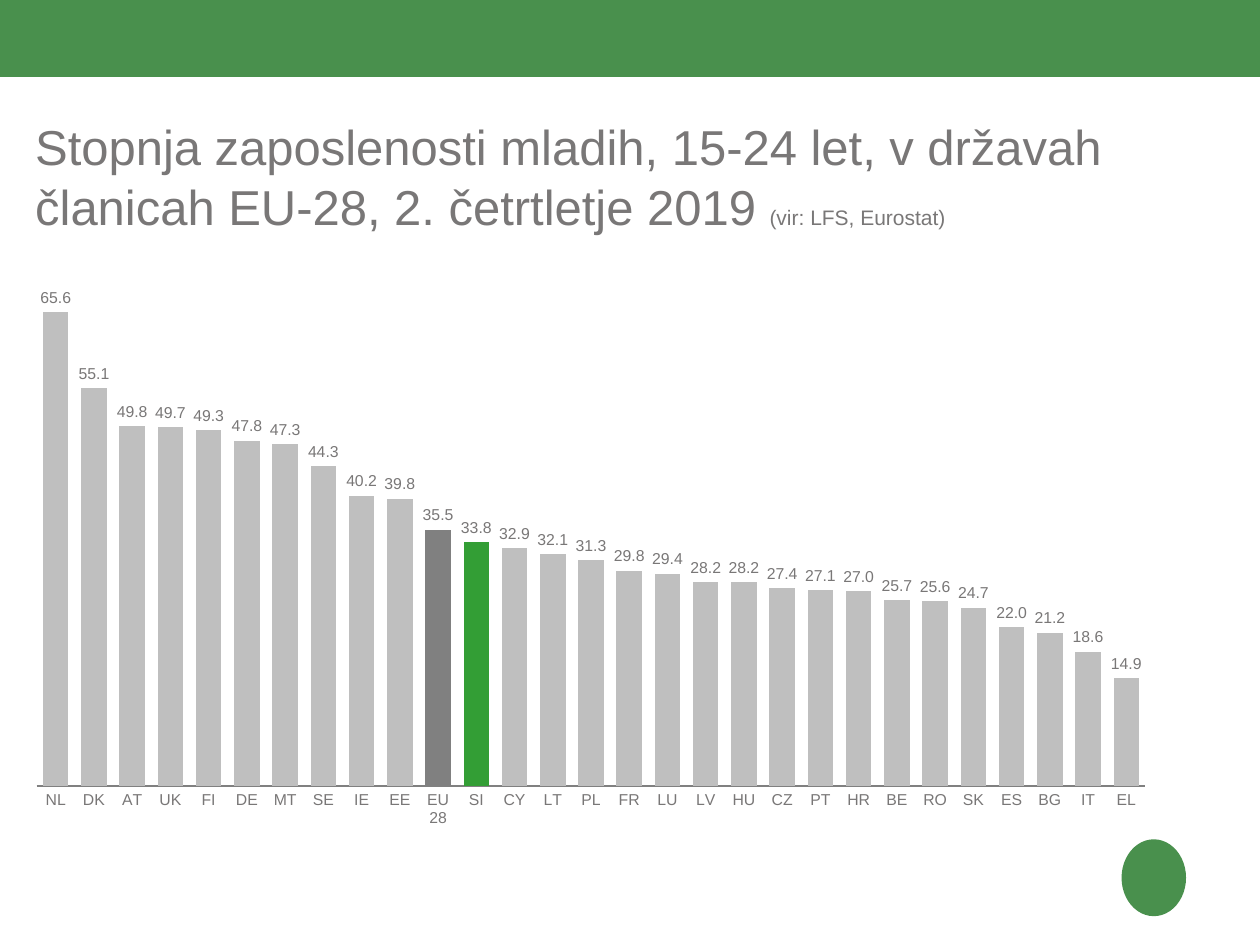
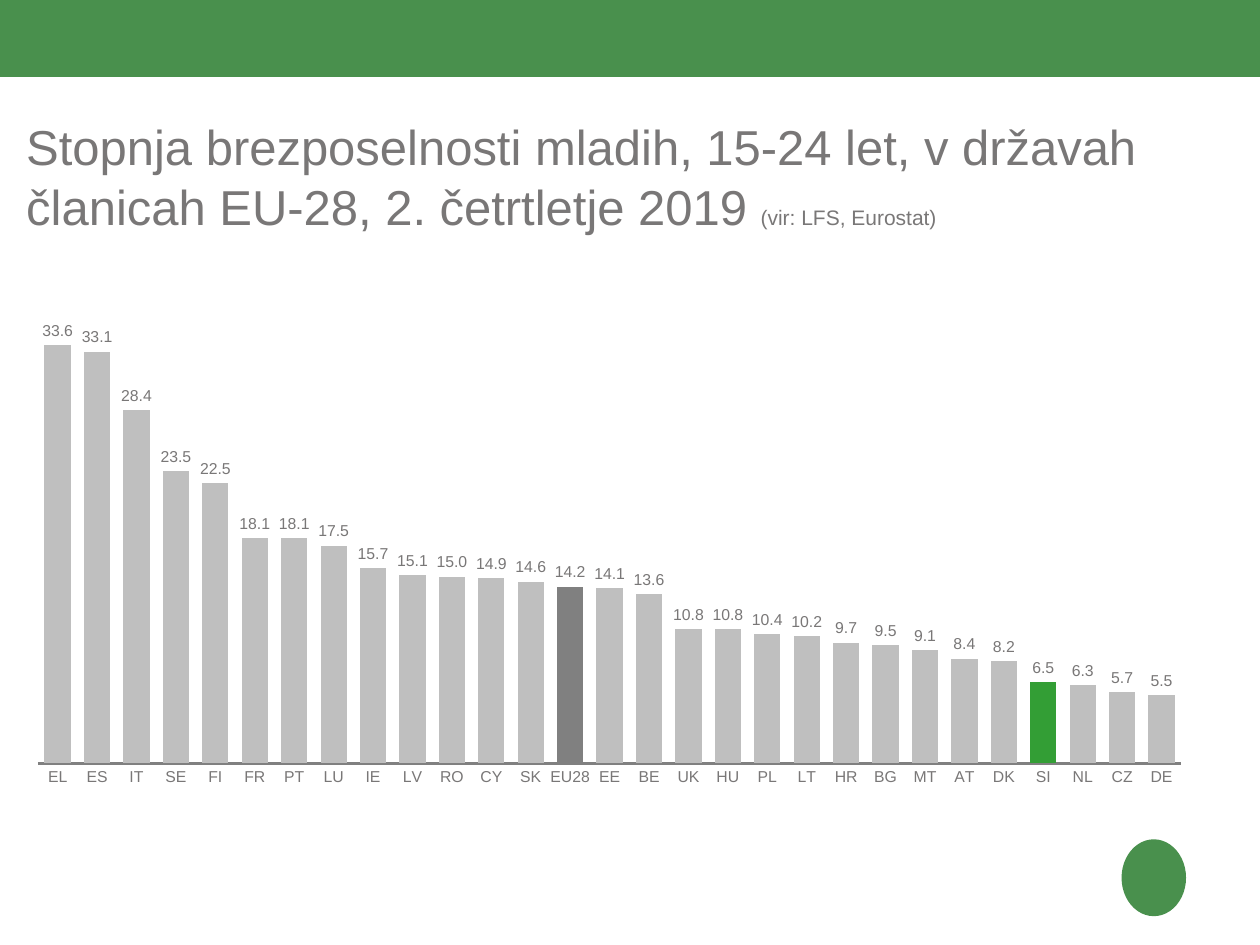
from lxml.etree import SubElement
from pptx import Presentation
from pptx.chart.data import CategoryChartData
from pptx.dml.color import RGBColor
from pptx.enum.chart import XL_CHART_TYPE as ChartType
from pptx.enum.chart import XL_LABEL_POSITION as LabelPosition
from pptx.enum.chart import XL_TICK_LABEL_POSITION as TickLabels
from pptx.enum.chart import XL_TICK_MARK as TickMark
from pptx.enum.shapes import MSO_SHAPE as Shape
from pptx.enum.text import MSO_ANCHOR as Anchor
from pptx.oxml.ns import qn
from pptx.util import Cm, Pt

FONT = "Arial"
GREEN = "49904D"
TEXT_GREY = "797777"
BAR_GREY = "BFBFBF"
EU_GREY = "808080"
SLOVENIA_GREEN = "339E35"
NUMBER_FORMAT = "#,##0.0"
HIGHLIGHTS = {"EU 28": EU_GREY, "EU28": EU_GREY, "SI": SLOVENIA_GREEN}

SLIDE_SIZE = (25.4, 19.05)
BAND_BOX = (0, 0, 25.4, 1.55)
EMBLEM_BOX = (22.61, 16.92, 1.3, 1.55)

EMPLOYMENT = {
    "NL": 65.6, "DK": 55.1, "AT": 49.8, "UK": 49.7, "FI": 49.3, "DE": 47.8,
    "MT": 47.3, "SE": 44.3, "IE": 40.2, "EE": 39.8, "EU 28": 35.5, "SI": 33.8,
    "CY": 32.9, "LT": 32.1, "PL": 31.3, "FR": 29.8, "LU": 29.4, "LV": 28.2,
    "HU": 28.2, "CZ": 27.4, "PT": 27.1, "HR": 27.0, "BE": 25.7, "RO": 25.6,
    "SK": 24.7, "ES": 22.0, "BG": 21.2, "IT": 18.6, "EL": 14.9,
}
UNEMPLOYMENT = {
    "EL": 33.6, "ES": 33.1, "IT": 28.4, "SE": 23.5, "FI": 22.5, "FR": 18.1,
    "PT": 18.1, "LU": 17.5, "IE": 15.7, "LV": 15.1, "RO": 15.0, "CY": 14.9,
    "SK": 14.6, "EU28": 14.2, "EE": 14.1, "BE": 13.6, "UK": 10.8, "HU": 10.8,
    "PL": 10.4, "LT": 10.2, "HR": 9.7, "BG": 9.5, "MT": 9.1, "AT": 8.4,
    "DK": 8.2, "SI": 6.5, "NL": 6.3, "CZ": 5.7, "DE": 5.5,
}


def color(hex_value):
    return RGBColor.from_string(hex_value)


def paint(target, hex_value):
    target.fill.solid()
    target.fill.fore_color.rgb = color(hex_value)


def to_cm(box):
    return [Cm(length) for length in box]


def add_plain_shape(slide, kind, box):
    shape = slide.shapes.add_shape(kind, *to_cm(box))
    shape.shadow.inherit = False
    paint(shape, GREEN)
    shape.line.fill.background()


def add_title(slide, box, topic):
    frame = slide.shapes.add_textbox(*to_cm(box)).text_frame
    frame.word_wrap = True
    frame.vertical_anchor = Anchor.TOP
    frame.margin_left = frame.margin_right = 0
    frame.margin_top = frame.margin_bottom = 0
    paragraph = frame.paragraphs[0]
    paragraph.line_spacing = Pt(34)
    heading = (f"Stopnja {topic} mladih, 15-24 let, v državah "
               "članicah EU-28, 2. četrtletje 2019 ")
    for text, size in ((heading, 28), ("(vir: LFS, Eurostat)", 12)):
        run = paragraph.add_run()
        run.text = text
        run.font.name = FONT
        run.font.size = Pt(size)
        run.font.color.rgb = color(TEXT_GREY)


def set_plot_area(chart, plot_box):
    """Fix the inner plot area, given as fractions of the chart."""
    plot_area = chart._chartSpace.chart.plotArea
    for old_layout in plot_area.findall(qn("c:layout")):
        plot_area.remove(old_layout)
    layout = plot_area.makeelement(qn("c:layout"))
    plot_area.insert(0, layout)
    manual = SubElement(layout, qn("c:manualLayout"))
    settings = [("layoutTarget", "inner"), ("xMode", "edge"), ("yMode", "edge")]
    settings += zip("xywh", plot_box)
    for tag, value in settings:
        SubElement(manual, qn(f"c:{tag}")).set("val", str(value))


def style_axes(chart, maximum):
    countries, rates = chart.category_axis, chart.value_axis
    for axis in (countries, rates):
        axis.has_major_gridlines = False
        axis.major_tick_mark = axis.minor_tick_mark = TickMark.NONE
    countries.tick_labels.font.size = Pt(9)
    countries.format.line.color.rgb = color(EU_GREY)
    countries.format.line.width = Pt(1.5)
    rates.minimum_scale = 0
    rates.maximum_scale = maximum
    rates.tick_label_position = TickLabels.NONE
    rates.format.line.fill.background()


def add_rate_chart(slide, box, rates, maximum, plot_box):
    data = CategoryChartData(number_format=NUMBER_FORMAT)
    data.categories = list(rates)
    data.add_series("Series 1", list(rates.values()))
    chart = slide.shapes.add_chart(
        ChartType.COLUMN_CLUSTERED, *to_cm(box), data).chart
    chart.has_legend = chart.has_title = False
    chart.font.name = FONT
    chart.font.size = Pt(10)
    chart.font.color.rgb = color(TEXT_GREY)
    set_plot_area(chart, plot_box)
    style_axes(chart, maximum)

    plot = chart.plots[0]
    plot.gap_width = 50
    plot.vary_by_categories = False
    plot.has_data_labels = True
    labels = plot.data_labels
    labels.show_value = True
    labels.position = LabelPosition.OUTSIDE_END
    labels.number_format = NUMBER_FORMAT
    labels.number_format_is_linked = False
    labels.font.size = Pt(9)
    labels.font.color.rgb = color(TEXT_GREY)

    series = plot.series[0]
    series.invert_if_negative = False
    paint(series.format, BAR_GREY)
    for index, country in enumerate(rates):
        if country in HIGHLIGHTS:
            paint(series.points[index].format, HIGHLIGHTS[country])


def add_rate_slide(presentation, topic, title_left, **chart_options):
    slide = presentation.slides.add_slide(presentation.slide_layouts[6])
    add_plain_shape(slide, Shape.RECTANGLE, BAND_BOX)
    add_plain_shape(slide, Shape.OVAL, EMBLEM_BOX)
    add_title(slide, (title_left, 2.34, 23.52, 1.8), topic)
    add_rate_chart(slide, **chart_options)


def main():
    presentation = Presentation()
    presentation.slide_width, presentation.slide_height = to_cm(SLIDE_SIZE)
    add_rate_slide(presentation, "zaposlenosti", 0.71,
                   box=(0.51, 5.54, 22.81, 11.71), rates=EMPLOYMENT,
                   maximum=70, plot_box=(0.01, 0.01, 0.98, 0.87))
    add_rate_slide(presentation, "brezposelnosti", 0.53,
                   box=(0.53, 5.13, 23.52, 11.4), rates=UNEMPLOYMENT,
                   maximum=40, plot_box=(0.01, 0.02, 0.98, 0.88))
    presentation.save("out.pptx")


if __name__ == "__main__":
    main()
